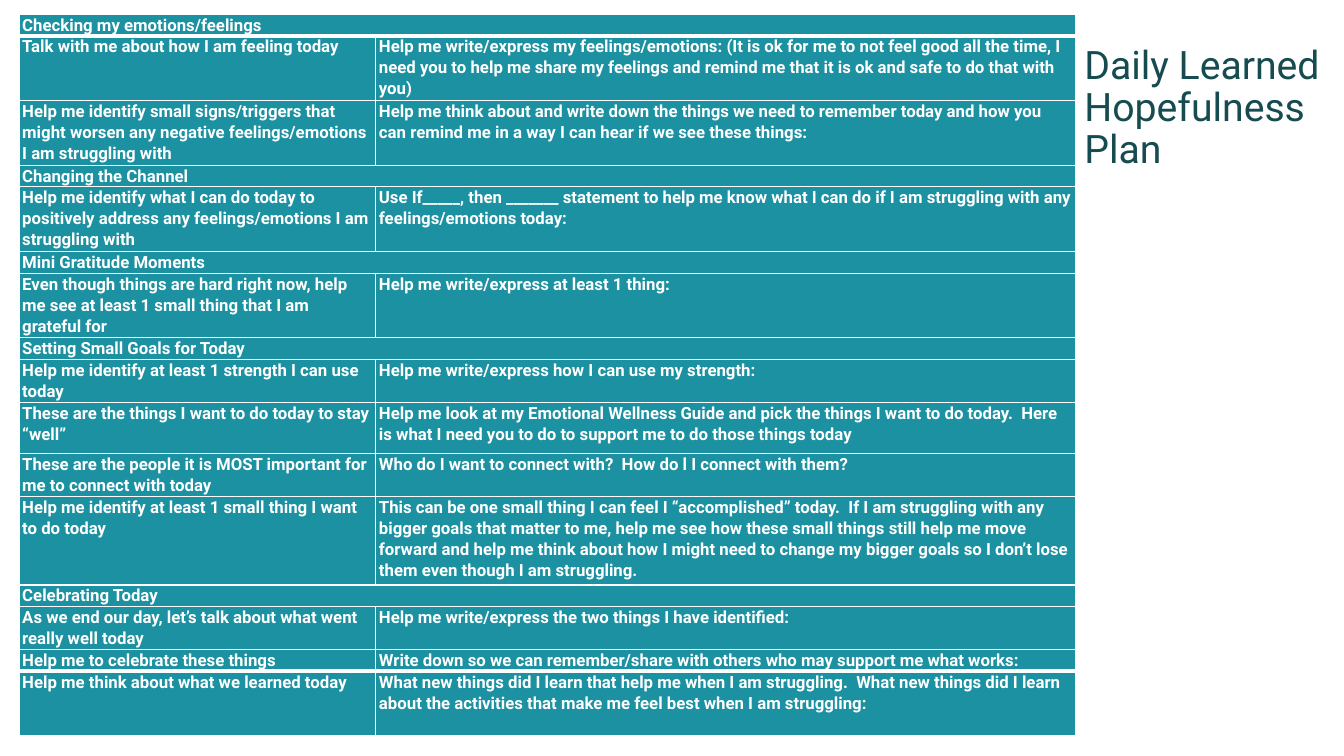
from lxml.etree import SubElement
from pptx import Presentation
from pptx.dml.color import RGBColor
from pptx.enum.text import MSO_ANCHOR
from pptx.oxml.ns import qn
from pptx.util import Cm, Pt

TEAL = RGBColor(0x1B, 0x91, 0xA1)
DARK_TEAL = RGBColor(0x16, 0x4B, 0x4F)
WHITE = RGBColor(0xFF, 0xFF, 0xFF)
FONT = "Roboto"
THIN, THICK = Pt(1), Pt(3)

TITLE = "Daily Learned Hopefulness Plan"
COLUMN_WIDTHS = (8.99, 17.63)

# Minimum row height in cm, then the cell texts; a single text spans both columns
PLAN = [
    (0.43, "Checking my emotions/feelings"),
    (1.32, "Talk with me about how I am feeling today",
     "Help me write/express my feelings/emotions: (It is ok for me to not feel good all the time, "
     "I need you to help me share my feelings and remind me that it is ok and safe to do that with you)"),
    (1.35, "Help me identify small signs/triggers that might worsen any negative feelings/emotions "
     "I am struggling with",
     "Help me think about and write down the things we need to remember today and how you can "
     "remind me in a way I can hear if we see these things:"),
    (0.43, "Changing the Channel"),
    (1.35, "Help me identify what I can do today to positively address any feelings/emotions "
     "I am struggling with",
     "Use If_____, then _______ statement to help me know what I can do if I am struggling with any "
     "feelings/emotions today:"),
    (0.43, "Mini Gratitude Moments"),
    (1.35, "Even though things are hard right now, help me see at least 1 small thing that I am "
     "grateful for",
     "Help me write/express at least 1 thing:"),
    (0.43, "Setting Small Goals for Today"),
    (0.89, "Help me identify at least 1 strength I can use today",
     "Help me write/express how I can use my strength:"),
    (1.28, "These are the things I want to do today to stay “well”",
     "Help me look at my Emotional Wellness Guide and pick the things I want to do today.  "
     "Here is what I need you to do to support me to do those things today"),
    (1.07, "These are the people it is MOST important for me to connect with today",
     "Who do I want to connect with?  How do l I connect with them?"),
    (2.23, "Help me identify at least 1 small thing I want to do today",
     "This can be one small thing I can feel I “accomplished” today.  If I am struggling with any "
     "bigger goals that matter to me, help me see how these small things still help me move forward "
     "and help me think about how I might need to change my bigger goals so I don’t lose them even "
     "though I am struggling."),
    (0.43, "Celebrating Today"),
    (0.89, "As we end our day, let’s talk about what went really well today",
     "Help me write/express the two things I have identified:"),
    (0.43, "Help me to celebrate these things",
     "Write down so we can remember/share with others who may support me what works:"),
    (1.63, "Help me think about what we learned today",
     "What new things did I learn that help me when I am struggling.  What new things did I learn "
     "about the activities that make me feel best when I am struggling:"),
]
THICK_RULES = (1, len(PLAN) - 1)  # rows with a heavy line above them


def style_paragraph(p, size, color, spacing, bold=False):
    p.line_spacing = spacing
    p.font.name = FONT
    p.font.size = Pt(size)
    p.font.bold = bold
    p.font.color.rgb = color


def set_borders(cell, top, bottom):
    tcPr = cell._tc.get_or_add_tcPr()
    sides = (("a:lnL", THIN), ("a:lnR", THIN), ("a:lnT", top), ("a:lnB", bottom))
    for tag, width in sides:
        ln = SubElement(tcPr, qn(tag), w=str(width))
        fill = SubElement(ln, qn("a:solidFill"))
        SubElement(fill, qn("a:srgbClr"), val=str(WHITE))


def add_plan_table(slide):
    height = sum(row[0] for row in PLAN)
    frame = slide.shapes.add_table(len(PLAN), len(COLUMN_WIDTHS), Cm(0.48), Cm(0.36),
                                   Cm(sum(COLUMN_WIDTHS)), Cm(height))
    table = frame.table
    for column, width in zip(table.columns, COLUMN_WIDTHS):
        column.width = Cm(width)
    for i, (row_height, *texts) in enumerate(PLAN):
        table.rows[i].height = Cm(row_height)
        top = THICK if i in THICK_RULES else THIN
        bottom = THICK if i + 1 in THICK_RULES else THIN
        if len(texts) == 1:
            table.cell(i, 0).merge(table.cell(i, 1))
        for j in range(len(COLUMN_WIDTHS)):
            cell = table.cell(i, j)
            if j < len(texts):
                cell.text = texts[j]
            cell.margin_left = cell.margin_right = Cm(0.08)
            cell.margin_top = cell.margin_bottom = 0
            set_borders(cell, top, bottom)
            cell.fill.solid()
            cell.fill.fore_color.rgb = TEAL
            style_paragraph(cell.text_frame.paragraphs[0], 12, WHITE, 1.07, bold=True)


def add_title(slide):
    tf = slide.shapes.add_textbox(Cm(27.08), Cm(0.03), Cm(6.86), Cm(4.44)).text_frame
    tf.word_wrap = True
    tf.vertical_anchor = MSO_ANCHOR.BOTTOM
    tf.text = TITLE
    style_paragraph(tf.paragraphs[0], 28, DARK_TEAL, 0.9)


def main():
    prs = Presentation()
    prs.slide_width, prs.slide_height = Cm(33.87), Cm(19.05)
    slide = prs.slides.add_slide(prs.slide_layouts[6])
    add_title(slide)
    add_plan_table(slide)
    prs.save("out.pptx")


if __name__ == "__main__":
    main()
